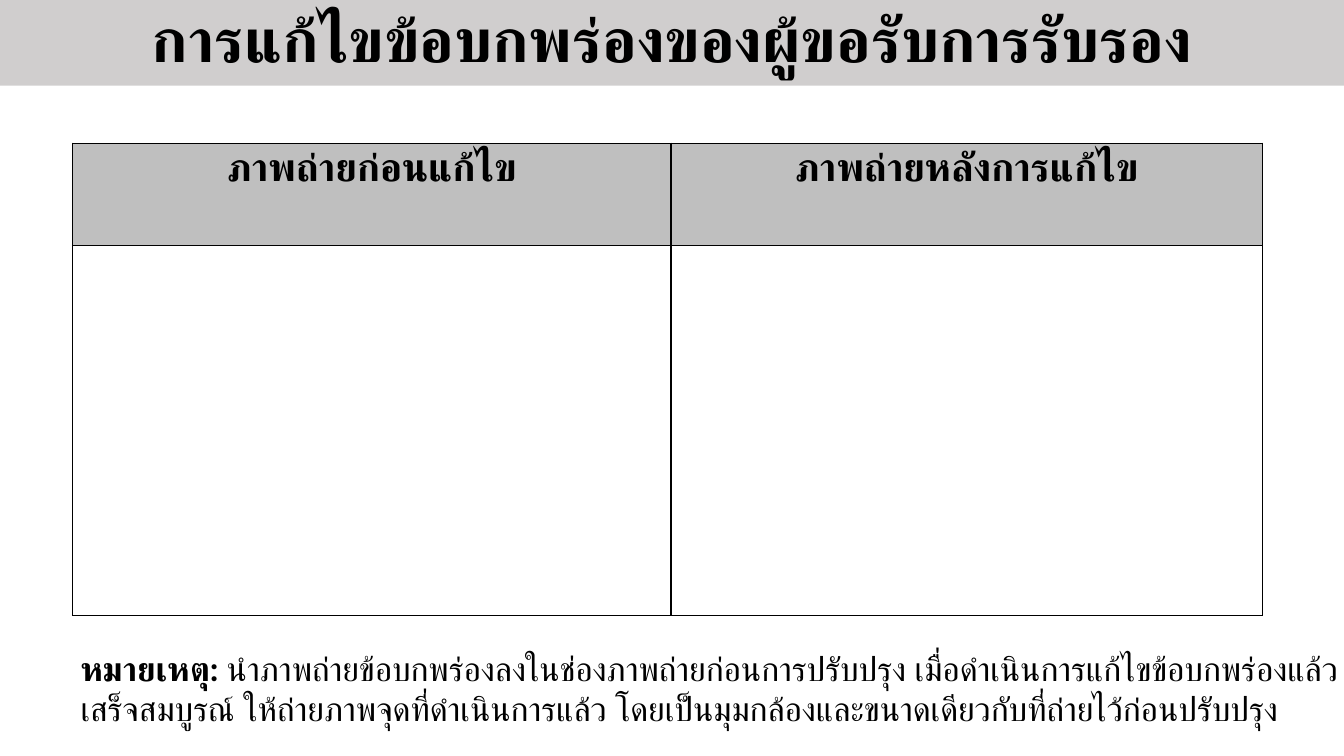
from lxml import etree
from pptx import Presentation
from pptx.dml.color import RGBColor
from pptx.enum.text import MSO_ANCHOR as Anchor, MSO_AUTO_SIZE as AutoSize, PP_ALIGN as Align
from pptx.oxml.ns import qn
from pptx.util import Inches, Pt

BLACK = RGBColor(0x00, 0x00, 0x00)
BANNER_GREY = RGBColor(0xD0, 0xCE, 0xCE)
HEADER_GREY = RGBColor(0xBF, 0xBF, 0xBF)
WIDTH, HEIGHT = 13.33, 7.5


def add_text(p, text, size=24, bold=False, color=BLACK, font="Lato"):
    """Append a run, giving Thai (complex script) text the same font as Latin."""
    r = p.add_run()
    r.text = text
    r.font.size, r.font.bold, r.font.name = Pt(size), bold, font
    r.font.color.rgb = color
    etree.SubElement(r.font._element, qn("a:cs"), typeface=font)


def set_borders(cell, color=BLACK, width=1):
    """Outline all four sides; border elements must precede the cell's fill."""
    tc_pr = cell._tc.get_or_add_tcPr()
    for i, side in enumerate(("lnL", "lnR", "lnT", "lnB")):
        ln = etree.Element(qn(f"a:{side}"), w=str(Pt(width)))
        fill = etree.SubElement(ln, qn("a:solidFill"))
        etree.SubElement(fill, qn("a:srgbClr"), val=str(color))
        tc_pr.insert(i, ln)


class CorrectionSlide:
    def __init__(self, prs):
        self.prs = prs
        self.slide = prs.slides.add_slide(prs.slide_layouts[5])

    def box(self, left, top, width, height):
        """Turn shares of the slide's size into lengths."""
        w, h = self.prs.slide_width, self.prs.slide_height
        return int(left * w), int(top * h), int(width * w), int(height * h)

    def title(self, text, *area):
        sp = self.slide.shapes.title
        sp.left, sp.top, sp.width, sp.height = self.box(*area)
        sp.fill.solid()
        sp.fill.fore_color.rgb = BANNER_GREY
        tf = sp.text_frame
        tf.auto_size, tf.vertical_anchor = AutoSize.NONE, Anchor.MIDDLE
        p = tf.paragraphs[0]
        p.alignment, p.line_spacing = Align.CENTER, 0.9
        add_text(p, text, size=44, bold=True)

    def photo_table(self, headers, col_shares, row_shares, *area):
        """Add a header row above an empty row for photographs."""
        left, top, width, height = self.box(*area)
        frame = self.slide.shapes.add_table(
            len(row_shares), len(headers), left, top, width, height)
        table = frame.table
        table.first_row = table.horz_banding = False
        for col, share in zip(table.columns, col_shares):
            col.width = int(width * share)
        for row, share in zip(table.rows, row_shares):
            row.height = int(height * share)
        for cell in table.iter_cells():
            cell.margin_top = cell.margin_bottom = 0
            cell.fill.background()
            set_borders(cell)
        for cell, text in zip(table.rows[0].cells, headers):
            cell.fill.solid()
            cell.fill.fore_color.rgb = HEADER_GREY
            p = cell.text_frame.paragraphs[0]
            p.alignment = Align.CENTER
            add_text(p, text, size=28, bold=True)

    def note(self, label, text, *area):
        tf = self.slide.shapes.add_textbox(*self.box(*area)).text_frame
        tf.word_wrap, tf.auto_size = True, AutoSize.SHAPE_TO_FIT_TEXT
        p = tf.paragraphs[0]
        add_text(p, label, bold=True)
        add_text(p, text)


def main():
    prs = Presentation()
    prs.slide_width, prs.slide_height = Inches(WIDTH), Inches(HEIGHT)
    s = CorrectionSlide(prs)
    s.title("การแก้ไขข้อบกพร่องของผู้ขอรับการรับรอง", 0, 0, 1, 0.85 / HEIGHT)
    s.photo_table(
        ("ภาพถ่ายก่อนแก้ไข", "ภาพถ่ายหลังการแก้ไข"),
        (0.503, 0.497), (0.217, 0.783),
        0.72 / WIDTH, 1.42 / HEIGHT, 11.8 / WIDTH, 4.69 / HEIGHT)
    s.note(
        "หมายเหตุ: ",
        "นำภาพถ่ายข้อบกพร่องลงในช่องภาพถ่ายก่อนการปรับปรุง "
        "เมื่อดำเนินการแก้ไขข้อบกพร่องแล้วเสร็จสมบูรณ์ "
        "ให้ถ่ายภาพจุดที่ดำเนินการแล้ว "
        "โดยเป็นมุมกล้องและขนาดเดียวกับที่ถ่ายไว้ก่อนปรับปรุง",
        0.7 / WIDTH, 6.38 / HEIGHT, 12.82 / WIDTH, 0.91 / HEIGHT)
    prs.save("out.pptx")


if __name__ == "__main__":
    main()
